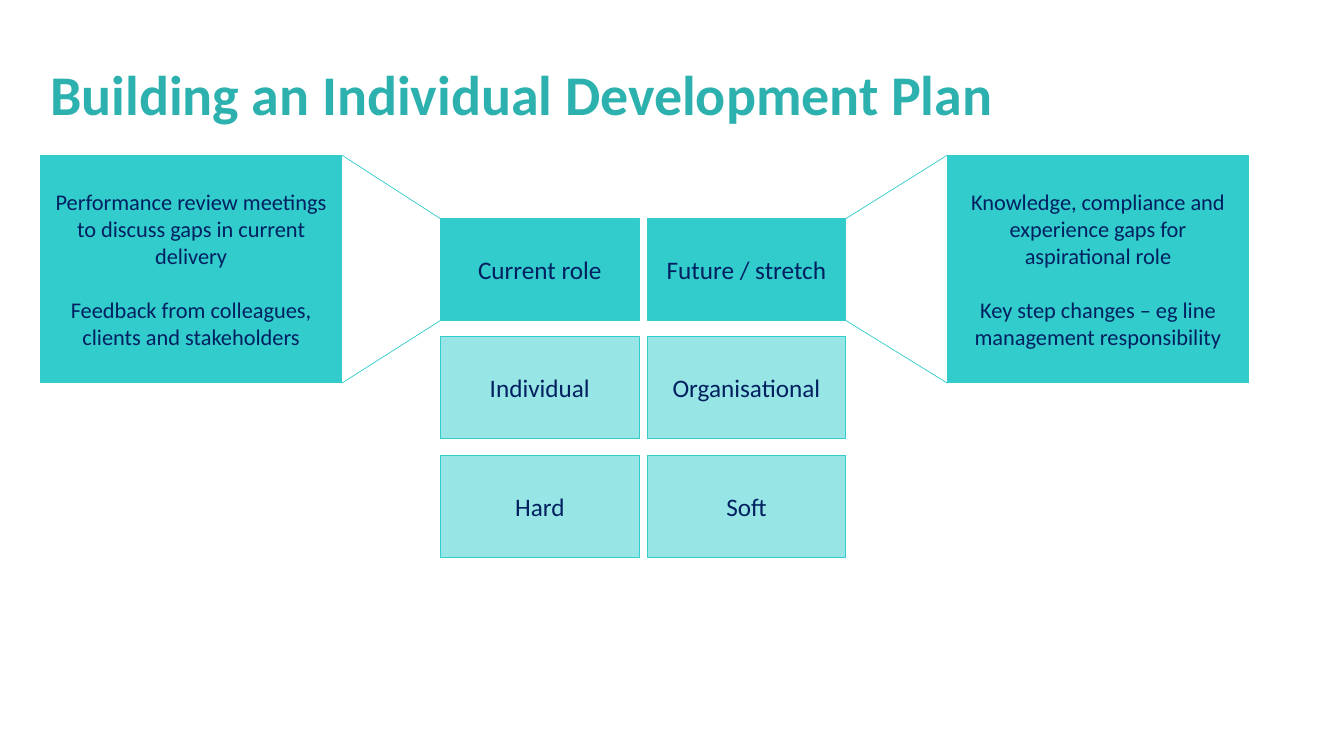
from dataclasses import dataclass

from lxml import etree
from pptx import Presentation
from pptx.dml.color import RGBColor
from pptx.enum.shapes import MSO_CONNECTOR, MSO_SHAPE
from pptx.enum.text import MSO_ANCHOR, PP_ALIGN
from pptx.oxml.ns import qn
from pptx.util import Pt

RECT = MSO_SHAPE.RECTANGLE
STRAIGHT = MSO_CONNECTOR.STRAIGHT
MIDDLE = MSO_ANCHOR.MIDDLE
LEFT, CENTER = PP_ALIGN.LEFT, PP_ALIGN.CENTER


@dataclass(frozen=True)
class Theme:
    font: str = "Calibri"
    heading: RGBColor = RGBColor(0x2C, 0xB1, 0xAE)
    teal: RGBColor = RGBColor(0x33, 0xCC, 0xCC)
    navy: RGBColor = RGBColor(0x00, 0x20, 0x60)
    title_size: float = 40
    tile_size: float = 18
    callout_size: float = 16
    border: float = 0.75
    connector: float = 0.5


class Builder:
    def __init__(self, slide, theme):
        self.s, self.t = slide, theme

    def set_text(self, sp, lines, size, color, align=CENTER, bold=False, gap=0):
        tf = sp.text_frame
        tf.word_wrap = True
        tf.vertical_anchor = MIDDLE
        for i, line in enumerate(lines):
            p = tf.add_paragraph() if i else tf.paragraphs[0]
            p.text = line
            p.alignment = align
            if i:
                p.space_before = Pt(gap)
            p.font.name, p.font.size, p.font.bold = self.t.font, Pt(size), bold
            p.font.color.rgb = color

    def title(self, text, x, y, w, h):
        sp = self.s.shapes.add_textbox(Pt(x), Pt(y), Pt(w), Pt(h))
        self.set_text(sp, [text], self.t.title_size, self.t.heading, LEFT, True)
        sp.text_frame.paragraphs[0].line_spacing = 0.9

    def box(self, lines, x, y, w, h, size, opacity=100, gap=0):
        """Draw a teal rectangle; opacity is a percentage of its fill."""
        sp = self.s.shapes.add_shape(RECT, Pt(x), Pt(y), Pt(w), Pt(h))
        sp.shadow.inherit = False
        sp.fill.solid()
        sp.fill.fore_color.rgb = self.t.teal
        if opacity < 100:
            clr = sp._element.spPr.find(qn("a:solidFill"))[0]
            etree.SubElement(clr, qn("a:alpha"), val=str(opacity * 1000))
        sp.line.color.rgb = self.t.teal
        sp.line.width = Pt(self.t.border)
        self.set_text(sp, lines, size, self.t.navy, gap=gap)

    def line(self, x1, y1, x2, y2):
        c = self.s.shapes.add_connector(STRAIGHT, Pt(x1), Pt(y1), Pt(x2), Pt(y2))
        c.line.color.rgb = self.t.teal
        c.line.width = Pt(self.t.connector)
        etree.SubElement(c._element.spPr, qn("a:effectLst"))


TILE_W, TILE_H = 142, 72.7
TILE_X, TILE_Y = 314.6, 156.2
COL_STEP, ROW_STEP = 147.6, 84.5
TILES = [
    ("Current role", "Future / stretch"),
    ("Individual", "Organisational"),
    ("Hard", "Soft"),
]

CALLOUT_Y, CALLOUT_W, CALLOUT_H = 110.9, 215.5, 162.7
LEFT_X, RIGHT_X = 28.8, 676.6
PARAGRAPH_GAP = 19.5
# Callout left edge, callout edge facing the tiles, tile edge it joins, text
CALLOUTS = [
    (LEFT_X, LEFT_X + CALLOUT_W, TILE_X,
     ["Performance review meetings to discuss gaps in current delivery",
      "Feedback from colleagues, clients and stakeholders"]),
    (RIGHT_X, RIGHT_X, TILE_X + COL_STEP + TILE_W,
     ["Knowledge, compliance and experience gaps for aspirational role",
      "Key step changes – eg line management responsibility"]),
]


def main():
    prs = Presentation()
    prs.slide_width, prs.slide_height = Pt(960), Pt(540)
    theme = Theme()
    b = Builder(prs.slides.add_slide(prs.slide_layouts[6]), theme)

    b.title("Building an Individual Development Plan", 28.8, 17.3, 828, 104.4)

    for row, labels in enumerate(TILES):
        for col, label in enumerate(labels):
            b.box([label], TILE_X + col * COL_STEP, TILE_Y + row * ROW_STEP,
                  TILE_W, TILE_H, theme.tile_size, opacity=50 if row else 100)

    for x, callout_edge, tile_edge, lines in CALLOUTS:
        b.box(lines, x, CALLOUT_Y, CALLOUT_W, CALLOUT_H,
              theme.callout_size, gap=PARAGRAPH_GAP)
        b.line(callout_edge, CALLOUT_Y, tile_edge, TILE_Y)
        b.line(callout_edge, CALLOUT_Y + CALLOUT_H, tile_edge, TILE_Y + TILE_H)

    prs.save("out.pptx")


if __name__ == "__main__":
    main()
